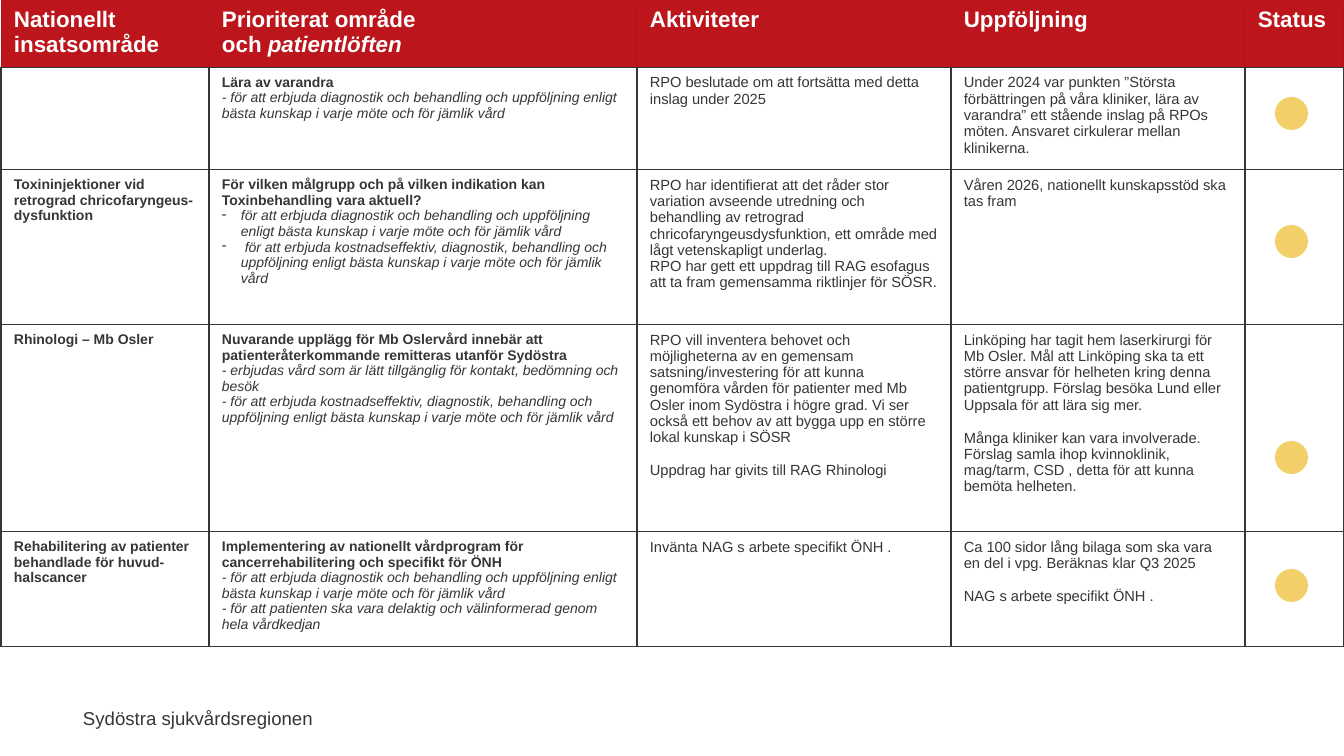
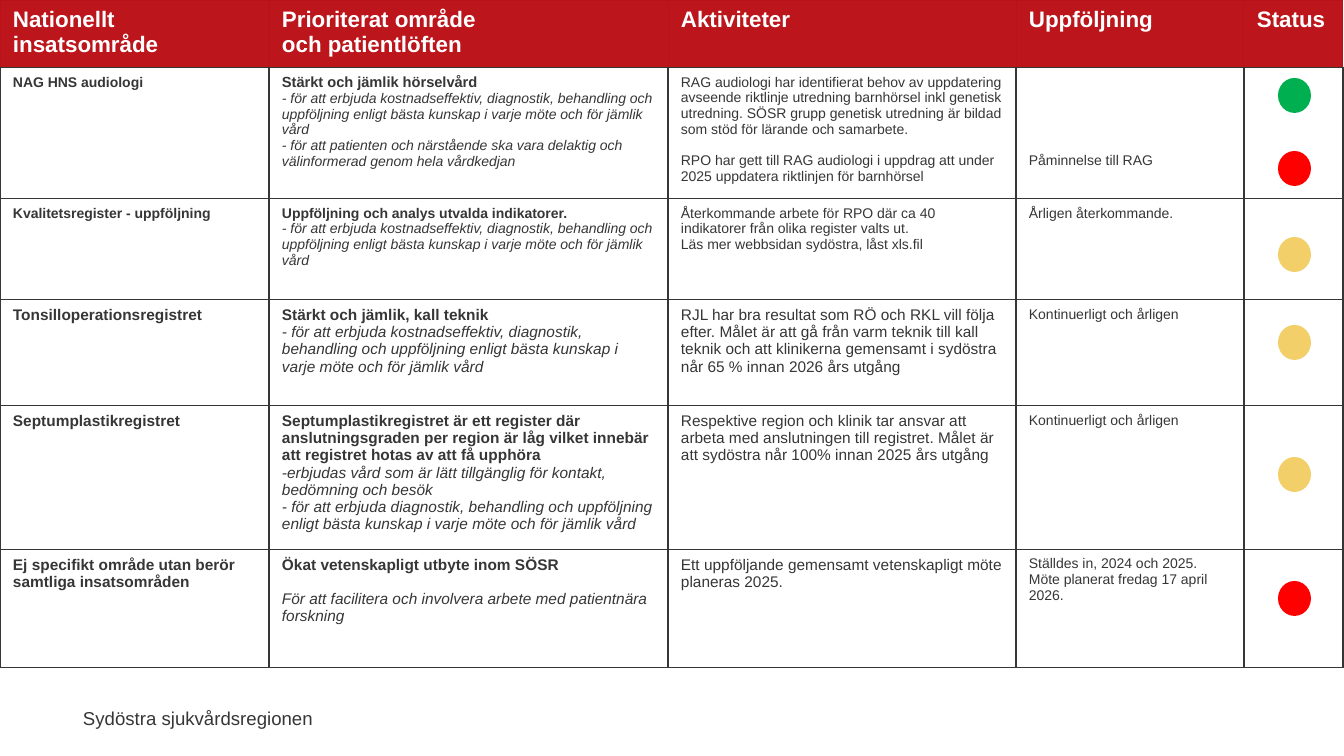
from dataclasses import dataclass

from lxml.etree import SubElement
from pptx import Presentation
from pptx.dml.color import RGBColor
from pptx.enum.shapes import MSO_SHAPE
from pptx.enum.text import PP_ALIGN
from pptx.oxml.ns import qn
from pptx.util import Pt

EMU_PER_PX = 914400 / 100.8
SLIDE_W, SLIDE_H = 1344, 756
INSET_X, INSET_Y = 13, 7
BULLET_INDENT = 19
FONT = "Arial"

HEADER_RED = RGBColor(0xBC, 0x15, 0x1B)
HEADER_EDGE = RGBColor(0xBC, 0x10, 0x18)
INK = RGBColor(0x36, 0x36, 0x36)
WHITE = RGBColor(0xFF, 0xFF, 0xFF)
ONGOING = RGBColor(0xF2, 0xCF, 0x68)
DONE = RGBColor(0x00, 0xB0, 0x50)
STOPPED = RGBColor(0xFF, 0x00, 0x00)


def px(length):
    return round(length * EMU_PER_PX)


# Text model
@dataclass
class Para:
    runs: list  # (text, bold, italic)
    size: float
    gap: float = 0
    bullet: bool = False


@dataclass
class Lowered:
    """Cell content that starts some lines below the top of its row."""
    paras: list
    offset: int


def bold(text, size=10):
    return Para([(text, True, False)], size)


def italic(text, size=10, gap=0, bullet=False):
    return Para([(text, False, True)], size, gap, bullet)


def plain(text, size=10.5, gap=0):
    return Para([(text, False, False)], size, gap)


# Phrases used in several rows
DIAGNOSTICS = ("för att erbjuda diagnostik och behandling och uppföljning enligt "
               "bästa kunskap i varje möte och för jämlik vård")
COST = ("för att erbjuda kostnadseffektiv, diagnostik, behandling och uppföljning "
        "enligt bästa kunskap i varje möte och för jämlik vård")
ACCESS = "erbjudas vård som är lätt tillgänglig för kontakt, bedömning och besök"


def header(promise_italic):
    def head(*lines):
        return [bold(line, 16) for line in lines]

    promise = Para([("och ", True, False), ("patientlöften", True, promise_italic)], 16)
    return [head("Nationellt insatsområde"),
            head("Prioriterat område") + [promise],
            head("Aktiviteter"), head("Uppföljning"), head("Status")]


CLINIC_ROWS = [
    [[],
     [bold("Lära av varandra"), italic("- " + DIAGNOSTICS)],
     [plain("RPO beslutade om att fortsätta med detta inslag under 2025")],
     [plain("Under 2024 var punkten ”Största förbättringen på våra kliniker, lära av "
            "varandra” ett stående inslag på RPOs möten. Ansvaret cirkulerar mellan "
            "klinikerna.")],
     []],
    [[bold("Toxininjektioner vid retrograd chricofaryngeus-dysfunktion")],
     [bold("För vilken målgrupp och på vilken indikation kan Toxinbehandling vara aktuell?"),
      italic(DIAGNOSTICS, bullet=True),
      italic(" " + COST, bullet=True)],
     [plain("RPO har identifierat att det råder stor variation avseende utredning och "
            "behandling av retrograd chricofaryngeusdysfunktion, ett område med lågt "
            "vetenskapligt underlag."),
      plain("RPO har gett ett uppdrag till RAG esofagus att ta fram gemensamma "
            "riktlinjer för SÖSR.")],
     [plain("Våren 2026, nationellt kunskapsstöd ska tas fram")],
     []],
    [[bold("Rhinologi – Mb Osler")],
     [bold("Nuvarande upplägg för Mb Oslervård innebär att patienteråterkommande "
           "remitteras utanför Sydöstra"),
      italic("- " + ACCESS),
      italic("- " + COST)],
     [plain("RPO vill inventera behovet och möjligheterna av en gemensam "
            "satsning/investering för att kunna genomföra vården för patienter med Mb "
            "Osler inom Sydöstra i högre grad. Vi ser också ett behov av att bygga upp "
            "en större lokal kunskap i SÖSR"),
      plain("Uppdrag har givits till RAG Rhinologi", gap=11.7)],
     [plain("Linköping har tagit hem laserkirurgi för Mb Osler. Mål att Linköping ska ta "
            "ett större ansvar för helheten kring denna patientgrupp. Förslag besöka "
            "Lund eller Uppsala för att lära sig mer."),
      plain("Många kliniker kan vara involverade. Förslag samla ihop kvinnoklinik, "
            "mag/tarm, CSD , detta för att kunna bemöta helheten.", gap=11.7)],
     []],
    [[bold("Rehabilitering av patienter behandlade för huvud- halscancer")],
     [bold("Implementering av nationellt vårdprogram för cancerrehabilitering och "
           "specifikt för ÖNH"),
      italic("- " + DIAGNOSTICS),
      italic("- för att patienten ska vara delaktig och välinformerad genom hela "
             "vårdkedjan")],
     [plain("Invänta NAG s arbete specifikt ÖNH .")],
     [plain("Ca 100 sidor lång bilaga som ska vara en del i vpg. Beräknas klar Q3 2025"),
      plain("NAG s arbete specifikt ÖNH .", gap=11.7)],
     []],
]

REGISTER_ROWS = [
    [[bold("NAG HNS audiologi")],
     [bold("Stärkt och jämlik hörselvård", 10.5),
      italic("- " + COST),
      italic("- för att patienten och närstående ska vara delaktig och välinformerad "
             "genom hela vårdkedjan")],
     [plain("RAG audiologi har identifierat behov av uppdatering avseende riktlinje "
            "utredning barnhörsel inkl genetisk utredning. SÖSR grupp genetisk utredning "
            "är bildad som stöd för lärande och samarbete.", 10),
      plain("RPO har gett till RAG audiologi i uppdrag att under 2025 uppdatera "
            "riktlinjen för barnhörsel", 10, gap=11.2)],
     Lowered([plain("Påminnelse till RAG", 10)], 78),
     []],
    [[bold("Kvalitetsregister - uppföljning")],
     [bold("Uppföljning och analys utvalda indikatorer."), italic("- " + COST)],
     [plain("Återkommande arbete för RPO där ca 40 indikatorer från olika register "
            "valts ut.", 10),
      plain("Läs mer webbsidan sydöstra, låst xls.fil", 10)],
     [plain("Årligen återkommande.", 10)],
     []],
    [[bold("Tonsilloperationsregistret", 11)],
     [bold("Stärkt och jämlik, kall teknik", 11), italic("- " + COST, 11)],
     [plain("RJL har bra resultat som RÖ och RKL vill följa efter. Målet är att gå från "
            "varm teknik till kall teknik och att klinikerna gemensamt i sydöstra når "
            "65 % innan 2026 års utgång", 11)],
     [plain("Kontinuerligt och årligen", 10)],
     []],
    [[bold("Septumplastikregistret", 11)],
     [bold("Septumplastikregistret är ett register där anslutningsgraden per region är "
           "låg vilket innebär att registret hotas av att få upphöra", 11),
      italic("-" + ACCESS, 11),
      italic("- för att erbjuda diagnostik, behandling och uppföljning enligt bästa "
             "kunskap i varje möte och för jämlik vård", 11)],
     [plain("Respektive region och klinik tar ansvar att arbeta med anslutningen till "
            "registret. Målet är att sydöstra når 100% innan 2025 års utgång", 11)],
     [plain("Kontinuerligt och årligen", 10)],
     []],
    [[bold("Ej specifikt område utan berör samtliga insatsområden", 11)],
     [bold("Ökat vetenskapligt utbyte inom SÖSR", 11),
      italic("För att facilitera och involvera arbete med patientnära forskning", 11,
             gap=12.3)],
     [plain("Ett uppföljande gemensamt vetenskapligt möte planeras 2025.", 11)],
     [plain("Ställdes in, 2024 och 2025. Möte planerat fredag 17 april 2026.", 10)],
     []],
]


# Element builders
def write_paragraphs(frame, paras, colour):
    for i, para in enumerate(paras):
        line = frame.paragraphs[0] if i == 0 else frame.add_paragraph()
        if para.bullet:
            props = line._p.get_or_add_pPr()
            props.set("marL", str(px(BULLET_INDENT)))
            props.set("indent", str(-px(BULLET_INDENT)))
            SubElement(props, qn("a:buChar")).set("char", "-")
        if para.gap:
            line.space_before = Pt(para.gap)
        for text, is_bold, is_italic in para.runs:
            run = line.add_run()
            run.text = text
            font = run.font
            font.name, font.size = FONT, Pt(para.size)
            font.bold, font.italic = is_bold, is_italic
            font.color.rgb = colour


def set_borders(cell, is_header):
    props = cell._tc.get_or_add_tcPr()
    for side in ("L", "R", "T", "B"):
        edge = is_header and side != "B"
        border = SubElement(props, qn(f"a:ln{side}"))
        border.set("w", str(Pt(0.75 if edge else 1)))
        fill = SubElement(border, qn("a:solidFill"))
        SubElement(fill, qn("a:srgbClr")).set("val", str(HEADER_EDGE if edge else INK))


def add_action_table(slide, left, widths, heights, rows):
    table = slide.shapes.add_table(len(heights), len(widths), px(left), 0,
                                   px(sum(widths)), px(sum(heights))).table
    table.first_row = table.horz_banding = False
    for column, width in zip(table.columns, widths):
        column.width = px(width)
    for r, (height, contents) in enumerate(zip(heights, rows)):
        table.rows[r].height = px(height)
        is_header = r == 0
        for c, content in enumerate(contents):
            cell = table.cell(r, c)
            offset = 0
            if isinstance(content, Lowered):
                content, offset = content.paras, content.offset
            cell.margin_left = cell.margin_right = px(INSET_X)
            cell.margin_top = px(INSET_Y + offset)
            cell.margin_bottom = px(INSET_Y)
            set_borders(cell, is_header)
            cell.fill.solid()
            cell.fill.fore_color.rgb = HEADER_RED if is_header else WHITE
            write_paragraphs(cell.text_frame, content, WHITE if is_header else INK)


def add_status_dots(slide, left, width, height, dots):
    for top, colour in dots:
        dot = slide.shapes.add_shape(MSO_SHAPE.OVAL, px(left), px(top),
                                     px(width), px(height))
        dot.shadow.inherit = False
        dot.fill.solid()
        dot.fill.fore_color.rgb = colour
        dot.line.fill.background()


def add_footer(slide):
    frame = slide.shapes.add_textbox(px(70), px(702), px(253), px(33)).text_frame
    frame.word_wrap = False
    write_paragraphs(frame, [plain("Sydöstra sjukvårdsregionen", 13.3)], INK)
    frame.paragraphs[0].alignment = PP_ALIGN.RIGHT


def add_page(deck):
    slide = deck.slides.add_slide(deck.slide_layouts[6])
    add_footer(slide)
    return slide


def main():
    deck = Presentation()
    deck.slide_width, deck.slide_height = px(SLIDE_W), px(SLIDE_H)

    # Clinical areas
    clinics = add_page(deck)
    add_action_table(clinics, 1, [208, 428, 314, 294, 99], [67, 101, 155, 207, 114],
                     [header(True)] + CLINIC_ROWS)
    add_status_dots(clinics, 1275, 33, 33,
                    [(top, ONGOING) for top in (97, 225, 441, 569)])

    # Registers and shared work
    registers = add_page(deck)
    add_action_table(registers, 0, [269, 399, 348, 228, 99],
                     [67, 131, 101, 106, 143, 118], [header(False)] + REGISTER_ROWS)
    add_status_dots(registers, 1278, 33, 35,
                    [(78, DONE), (151, STOPPED), (237, ONGOING), (325, ONGOING),
                     (457, ONGOING), (581, STOPPED)])

    deck.save("out.pptx")


if __name__ == "__main__":
    main()
